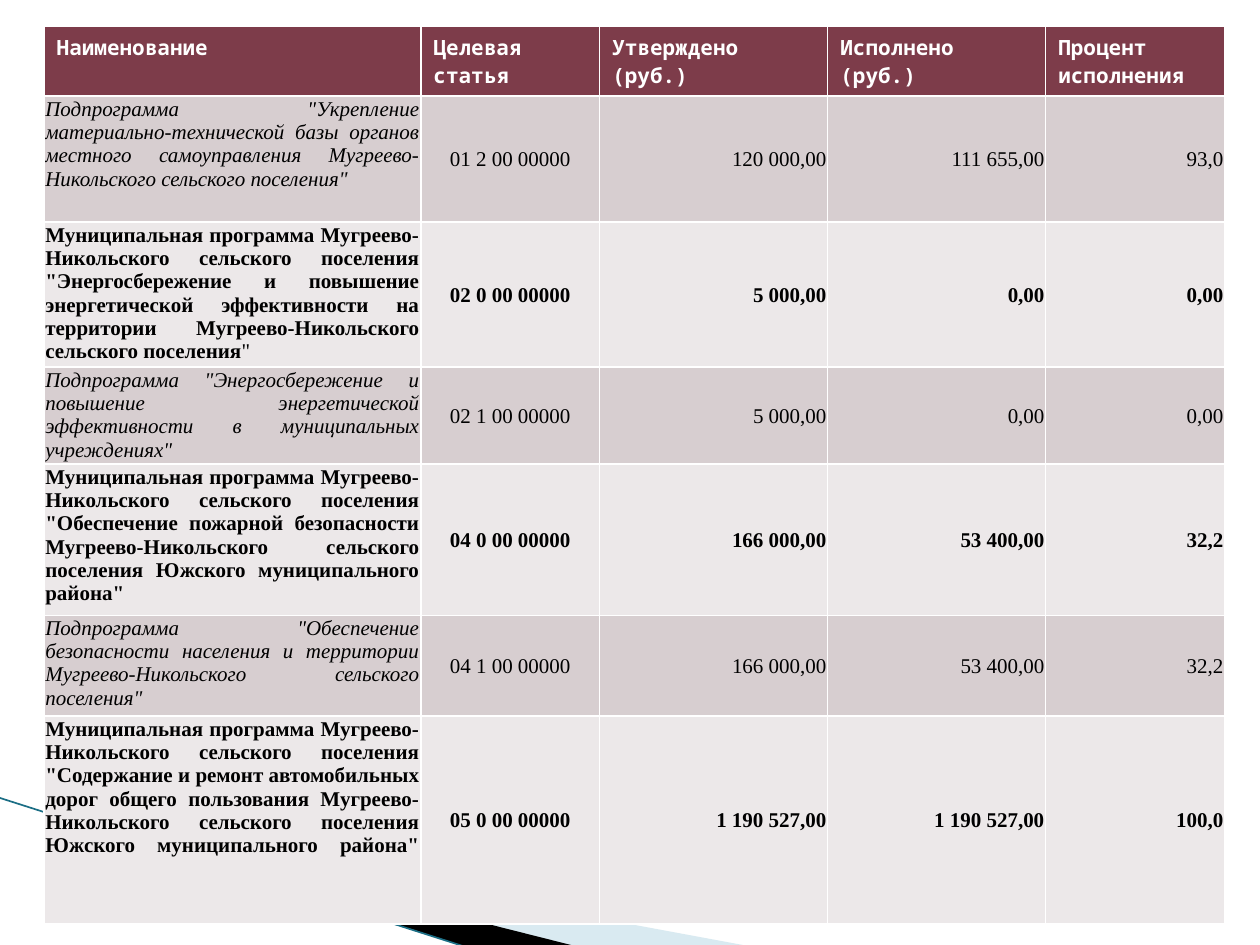
from pptx import Presentation
from pptx.dml.color import RGBColor as Rgb
from pptx.enum.shapes import MSO_CONNECTOR as Link
from pptx.enum.text import MSO_ANCHOR as Anchor, PP_ALIGN as Align
from pptx.oxml.ns import qn
from pptx.util import Inches, Pt
from lxml.etree import SubElement as Sub

SERIF = "Times New Roman"
MONO = "Noto Sans Mono"
COLS = [2.99, 1.42, 1.81, 1.73, 1.42]
HIGHS = [0.52, 1, 1.15, 0.77, 1.2, 0.8, 1.65]
ALIGNS = [Align.JUSTIFY, Align.CENTER] + [Align.RIGHT] * 3
HEAD = ["Наименование", "Целевая статья", "Утверждено (руб.)",
        "Исполнено (руб.)", "Процент исполнения"]
ROWS = [
    ['Подпрограмма "Укрепление материально-технической базы органов местного '
     'самоуправления Мугреево-Никольского сельского поселения"',
     "01 2 00 00000", "120 000,00", "111 655,00", "93,0"],
    ['Муниципальная программа Мугреево-Никольского сельского поселения '
     '"Энергосбережение и повышение энергетической эффективности на '
     'территории Мугреево-Никольского сельского поселения',
     "02 0 00 00000", "5 000,00", "0,00", "0,00"],
    ['Подпрограмма "Энергосбережение и повышение энергетической '
     'эффективности в муниципальных учреждениях"',
     "02 1 00 00000", "5 000,00", "0,00", "0,00"],
    ['Муниципальная программа Мугреево-Никольского сельского поселения '
     '"Обеспечение пожарной безопасности Мугреево-Никольского сельского '
     'поселения Южского муниципального района"',
     "04 0 00 00000", "166 000,00", "53 400,00", "32,2"],
    ['Подпрограмма "Обеспечение безопасности населения и территории '
     'Мугреево-Никольского сельского поселения"',
     "04 1 00 00000", "166 000,00", "53 400,00", "32,2"],
    ['Муниципальная программа Мугреево-Никольского сельского поселения '
     '"Содержание и ремонт автомобильных дорог общего пользования '
     'Мугреево-Никольского сельского поселения\n'
     'Южского муниципального района"\n',
     "05 0 00 00000", "1 190 527,00", "1 190 527,00", "100,0"],
]


def paint(fill, color):
    fill.solid()
    fill.fore_color.rgb = Rgb.from_string(color)


def style(run, face, color, bold=False, slant=False):
    font = run.font
    font.name, font.size = face, Pt(12)
    font.bold, font.italic = bold, slant
    font.color.rgb = Rgb.from_string(color)


def add_wedge(slide, points, color, alpha=100):
    spots = [(Inches(x), Inches(y)) for x, y in points]
    form = slide.shapes.build_freeform(*spots[0])
    form.add_line_segments(spots[1:], close=True)
    wedge = form.convert_to_shape()
    wedge.shadow.inherit = False
    wedge.line.fill.background()
    paint(wedge.fill, color)
    if alpha < 100:
        tone = next(wedge.element.spPr.iter(qn("a:srgbClr")))
        Sub(tone, qn("a:alpha"), val=str(alpha * 1000))


def add_line(slide, start, end, color):
    ends = [Inches(n) for n in (*start, *end)]
    line = slide.shapes.add_connector(Link.STRAIGHT, *ends)
    line.line.width = Pt(0.95)
    paint(line.line.fill, color)
    Sub(line.element.spPr, qn("a:effectLst"))


def write_head(cell, text):
    paint(cell.fill, "7D3C4A")
    cell.text_frame.text = text
    style(cell.text_frame.paragraphs[0].runs[0], MONO, "FFFFFF", True)


def write_cell(cell, text, col, main):
    paint(cell.fill, "ECE8E9" if main else "D7CED0")
    cell.margin_left = cell.margin_right = cell.margin_top = Inches(0.01)
    cell.margin_bottom = 0
    cell.vertical_anchor = Anchor.MIDDLE if col else Anchor.TOP
    para = cell.text_frame.paragraphs[0]
    para.text = text
    para.alignment = ALIGNS[col]
    for run in para.runs:
        style(run, SERIF, "000000", main, not main and col == 0)
    return para


def add_grid(slide):
    spot = [Inches(n) for n in (0.35, 0.21, sum(COLS), sum(HIGHS))]
    table = slide.shapes.add_table(len(HIGHS), len(COLS), *spot).table
    for col, wide in zip(table.columns, COLS):
        col.width = Inches(wide)
    for row, high in zip(table.rows, HIGHS):
        row.height = Inches(high)
    for col, text in enumerate(HEAD):
        write_head(table.cell(0, col), text)
    for row, texts in enumerate(ROWS, 1):
        for col, text in enumerate(texts):
            para = write_cell(table.cell(row, col), text, col, row % 2 == 0)
            if text.count('"') == 1:
                quote = para.add_run()
                quote.text = '"'
                style(quote, SERIF, "000000")


def main():
    deck = Presentation()
    deck.slide_width, deck.slide_height = Inches(10), Inches(7.5)
    slide = deck.slides.add_slide(deck.slide_layouts[6])
    paint(slide.background.fill, "FFFFFF")
    add_wedge(slide, [(0.55, 6.51), (5.95, 7.51), (4.56, 7.51), (0.55, 6.5)],
              "A0CBDC", 40)
    add_wedge(slide, [(0.53, 6.49), (4.57, 7.51), (3.72, 7.52), (0.54, 6.5)],
              "000000")
    add_line(slide, (-0.01, 6.33), (3.71, 7.52), "1B6E85")
    add_grid(slide)
    deck.save("out.pptx")


if __name__ == "__main__":
    main()
